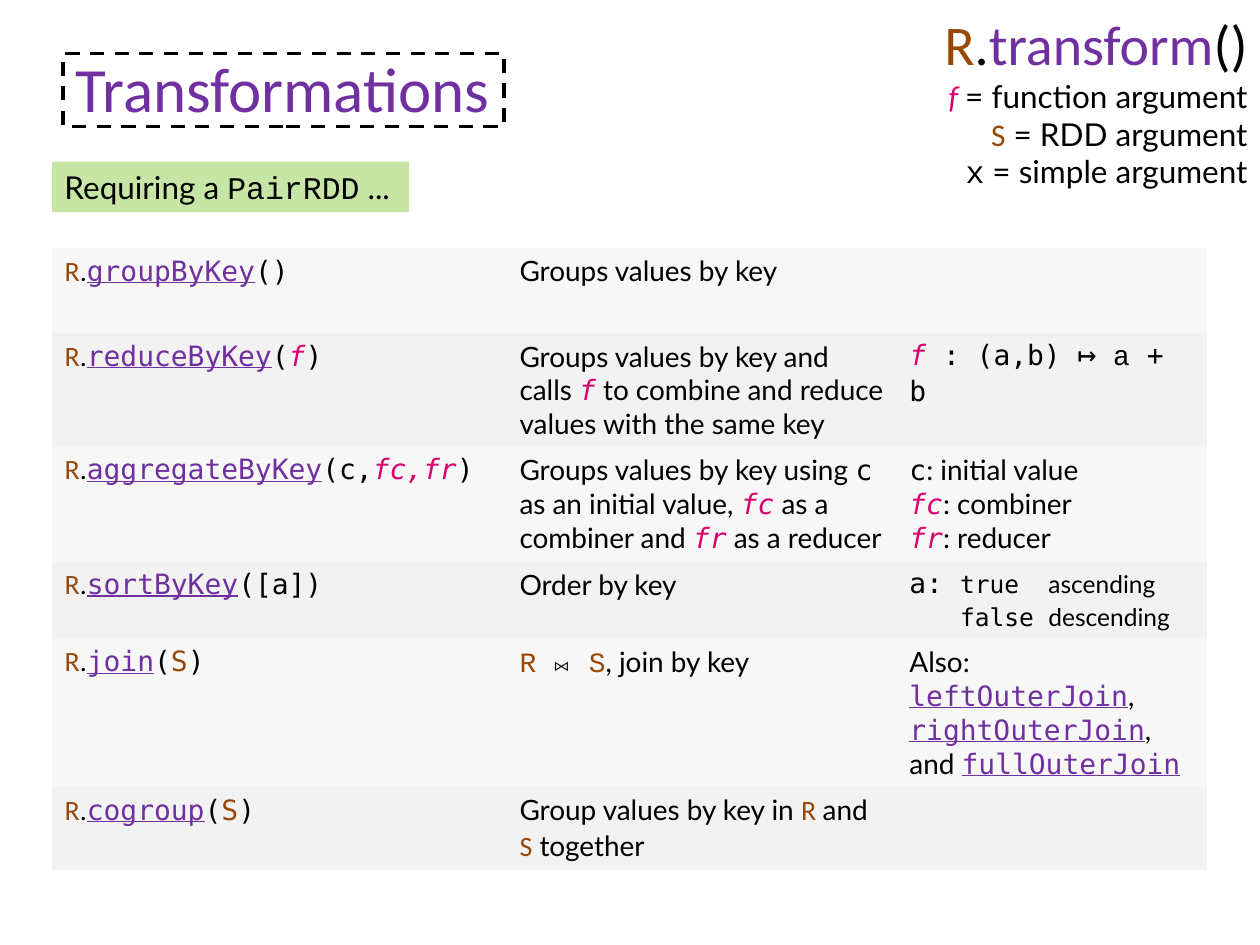
from lxml import etree
from pptx import Presentation
from pptx.dml.color import RGBColor
from pptx.enum.dml import MSO_LINE
from pptx.enum.shapes import MSO_SHAPE
from pptx.enum.text import MSO_ANCHOR, MSO_AUTO_SIZE, PP_ALIGN
from pptx.oxml.ns import qn
from pptx.util import Cm, Pt

RECTANGLE = MSO_SHAPE.RECTANGLE
DASH = MSO_LINE.DASH
MIDDLE = MSO_ANCHOR.MIDDLE
GROW = MSO_AUTO_SIZE.SHAPE_TO_FIT_TEXT
LEFT, RIGHT = PP_ALIGN.LEFT, PP_ALIGN.RIGHT

BLACK = RGBColor(0x00, 0x00, 0x00)
WHITE = RGBColor(0xFF, 0xFF, 0xFF)
PURPLE = RGBColor(0x70, 0x30, 0xA0)
BROWN = RGBColor(0x98, 0x48, 0x07)
PINK = RGBColor(0xDA, 0x00, 0x6D)
GREEN = RGBColor(0xC5, 0xE6, 0xA2)
BANDS = [RGBColor(0xF7, 0xF7, 0xF7), RGBColor(0xF2, 0xF2, 0xF2)]

SANS, HEAD, MONO, COURIER = "Lato", "Calibri", "DejaVu Sans Mono", "Courier New"
NO_STYLE_NO_GRID = "{2D5ABB26-0587-4C30-8999-92F81FD0307C}"

# style: font, colour, italic, underline
STYLES = {
    "text": (SANS, BLACK, False, False),
    "code": (MONO, BLACK, False, False),
    "courier": (COURIER, BLACK, False, False),
    "method": (MONO, PURPLE, False, True),
    "function": (MONO, PINK, True, False),
    "rdd": (HEAD, BROWN, False, False),
    "rdd code": (MONO, BROWN, False, False),
    "rdd courier": (COURIER, BROWN, False, False),
    "dot": (HEAD, BLACK, False, False),
    "heading": (HEAD, PURPLE, False, False),
    "heading function": (HEAD, PINK, True, False),
}


def write_paragraphs(text_frame, paragraphs, size, align=LEFT):
    """Each paragraph is a list of runs: (text, style) or (text, style, size)."""
    for index, runs in enumerate(paragraphs):
        paragraph = text_frame.paragraphs[0] if index == 0 else text_frame.add_paragraph()
        paragraph.alignment = align
        for text, style, *own_size in runs:
            run = paragraph.add_run()
            run.text = text
            font = run.font
            font.name, font.color.rgb, font.italic, font.underline = STYLES[style]
            font.size = Pt(own_size[0] if own_size else size)


prs = Presentation()
prs.slide_width, prs.slide_height = Cm(25.4), Cm(19.05)
slide = prs.slides.add_slide(prs.slide_layouts[5])

# Title in its dashed frame
title = slide.shapes.title
title.left, title.top, title.width, title.height = Cm(1.27), Cm(0.76), Cm(22.86), Cm(1.98)
title.text_frame.vertical_anchor = MIDDLE
write_paragraphs(title.text_frame, [[("Transformations", "heading")]], 36)

title_border = slide.shapes.add_shape(RECTANGLE, Cm(1.27), Cm(1.08), Cm(8.89), Cm(1.47))
title_border.shadow.inherit = False
title_border.fill.solid()
title_border.fill.fore_color.rgb = WHITE
title_border.line.color.rgb = BLACK
title_border.line.width = Pt(2)
title_border.line.dash_style = DASH
title.element.addprevious(title_border.element)

# Table of methods: name, arguments, description, remark
METHODS = [
    ("groupByKey", [("()", "code")],
     [[("Groups values by key", "text")]],
     []),
    ("reduceByKey", [("(", "code"), ("f", "function"), (")", "code")],
     [[("Groups values by key and calls ", "text"), ("f", "function"),
       (" to combine and reduce values with the same key", "text")]],
     [[("f ", "function"), (": (a,b) ", "code"), ("↦", "courier", 18),
       (" a", "courier"), (" + b", "code")]]),
    ("aggregateByKey", [("(c,", "code"), ("fc,fr", "function"), (")", "code")],
     [[("Groups values by key using ", "text"), ("c", "code"),
       (" as an initial value, ", "text"), ("fc", "function"),
       (" as a combiner and ", "text"), ("fr", "function"), (" as a reducer", "text")]],
     [[("c", "code"), (": initial value", "text")],
      [("fc", "function"), (": combiner", "text")],
      [("fr", "function"), (": reducer", "text")]]),
    ("sortByKey", [("([a])", "code")],
     [[("Order by key", "text")]],
     [[("a:\t", "code"), ("true\t", "code", 14), ("ascending", "text", 14)],
      [("\t", "code"), ("false\t", "code", 14), ("descending", "text", 14)]]),
    ("join", [("(", "code"), ("S", "rdd code"), (")", "code")],
     [[("R ", "rdd courier"), ("⨝", "courier"), (" ", "courier", 18),
       ("S", "rdd courier"), (", join by key", "text")]],
     [[("Also: ", "text"), ("leftOuterJoin", "method"), (", ", "text"),
       ("rightOuterJoin", "method"), (", and ", "text"), ("fullOuterJoin", "method")]]),
    ("cogroup", [("(", "code"), ("S", "rdd code"), (")", "code")],
     [[("Group values by key in ", "text"), ("R ", "rdd"), ("and ", "text"),
       ("S", "rdd"), (" together", "text")]],
     []),
]

table_frame = slide.shapes.add_table(len(METHODS), 3, Cm(1.05), Cm(5), Cm(23.29), Cm(11.76))
table = table_frame.table
table.first_row = table.horz_banding = False
table_frame.element.find(".//" + qn("a:tableStyleId")).text = NO_STYLE_NO_GRID
for column, width in zip(table.columns, (9.17, 7.86, 6.26)):
    column.width = Cm(width)

for row, (name, arguments, description, remark) in enumerate(METHODS):
    table.rows[row].height = Cm(1.72 if row == 0 else 1.42)
    call = [("R", "rdd"), (".", "dot"), (name, "method")] + arguments
    for col, paragraphs in enumerate(([call], description, remark)):
        cell = table.cell(row, col)
        cell.fill.solid()
        cell.fill.fore_color.rgb = BANDS[row % 2]
        write_paragraphs(cell.text_frame, paragraphs, 16)
table_frame.height = Cm(11.76)

# Tab stops line up the sort orders and their meanings
for paragraph in table.cell(3, 2).text_frame.paragraphs:
    tab_list = etree.SubElement(paragraph._p.get_or_add_pPr(), qn("a:tabLst"))
    for position in (1.02, 2.8):
        etree.SubElement(tab_list, qn("a:tab"), pos=str(Cm(position)), algn="l")

# Requirement label
requirement = slide.shapes.add_shape(RECTANGLE, Cm(1.05), Cm(3.26), Cm(7.2), Cm(1.02))
requirement.shadow.inherit = False
requirement.fill.solid()
requirement.fill.fore_color.rgb = GREEN
green = requirement.element.spPr.find(".//" + qn("a:srgbClr"))
etree.SubElement(green, qn("a:alpha"), val="96000")
requirement.line.fill.background()
requirement.text_frame.word_wrap = True
requirement.text_frame.auto_size = GROW
write_paragraphs(requirement.text_frame, [
    [("Requiring a ", "text"), ("PairRDD", "courier"), (" ...", "text")],
], 18)

# Notation key
notation = slide.shapes.add_textbox(Cm(17.35), Cm(0.07), Cm(8.05), Cm(3.94))
notation.text_frame.word_wrap = True
notation.text_frame.auto_size = GROW
write_paragraphs(notation.text_frame, [
    [("R", "rdd", 32), (".", "dot", 32), ("transform", "heading", 32), ("()", "dot", 32)],
    [("f ", "heading function"), ("= function argument", "text")],
    [("S", "rdd"), (" = RDD argument", "text")],
    [("x", "courier"), (" = simple argument", "text")],
], 18, RIGHT)

prs.save("out.pptx")
